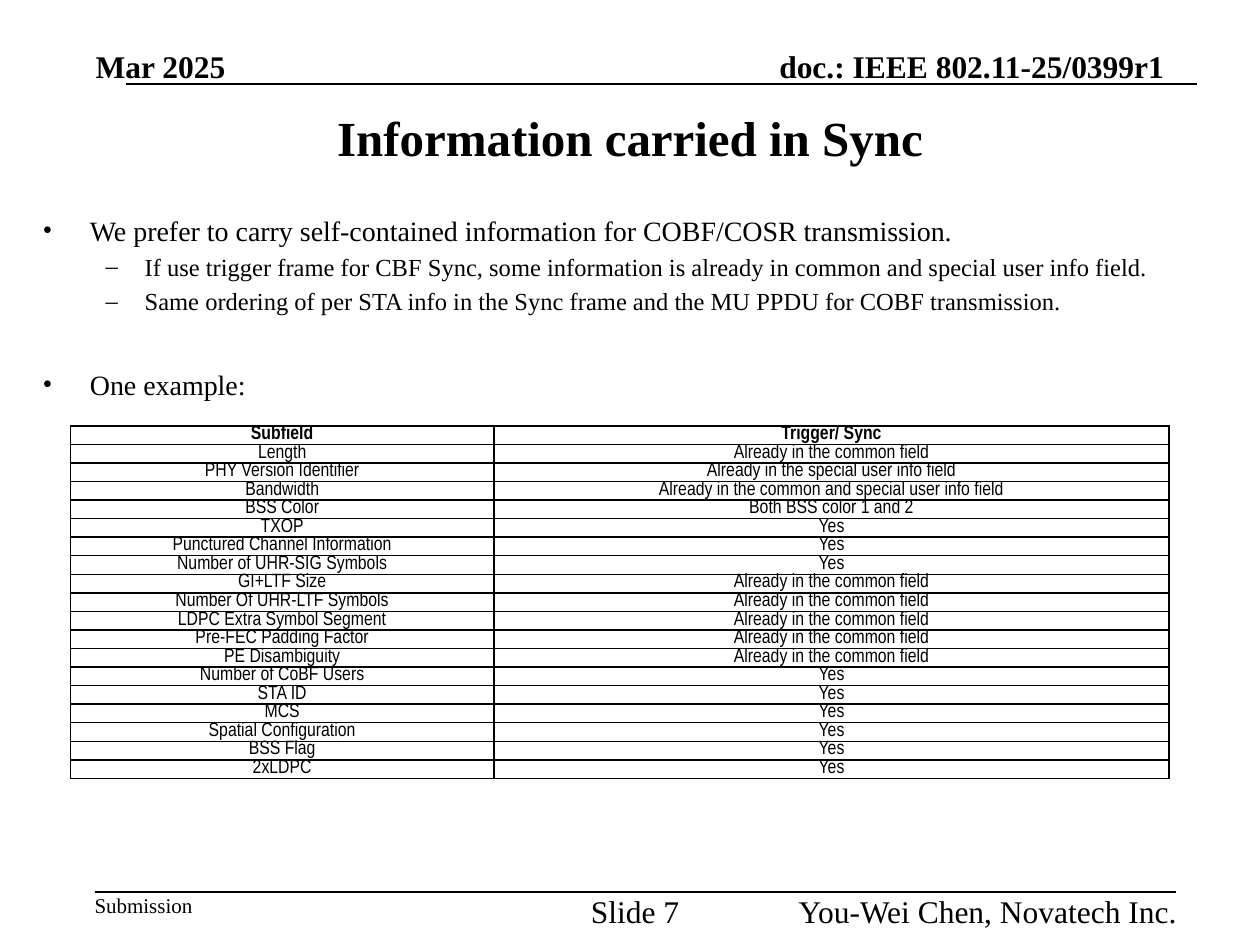
from lxml import etree
from pptx import Presentation
from pptx import util as u
from pptx.dml.color import RGBColor
from pptx.enum import shapes, text
from pptx.oxml import ns

BLACK = RGBColor(0, 0, 0)
WHITE = RGBColor(255, 255, 255)
SERIF = "Times New Roman"
NARROW = "Arial Narrow"
WIDTH, HEIGHT = u.Inches(10), u.Inches(7.5)
COLUMN, ROW = WIDTH / 100, HEIGHT / 75
LEFT, CENTER, RIGHT = text.PP_ALIGN.LEFT, text.PP_ALIGN.CENTER, text.PP_ALIGN.RIGHT
TOP, MIDDLE, BOTTOM = text.MSO_ANCHOR.TOP, text.MSO_ANCHOR.MIDDLE, text.MSO_ANCHOR.BOTTOM
BULLETS = [("•", 3.75, 3.75, 16), ("–", 8.1, 3.1, 14)]

COMMON = "Already in the common field"
FIELDS = [
    ("Subfield", "Trigger/ Sync"),
    ("Length", COMMON),
    ("PHY Version Identifier", "Already in the special user info field"),
    ("Bandwidth", "Already in the common and special user info field"),
    ("BSS Color", "Both BSS color 1 and 2"),
    ("TXOP", "Yes"),
    ("Punctured Channel Information", "Yes"),
    ("Number of UHR-SIG Symbols", "Yes"),
    ("GI+LTF Size", COMMON),
    ("Number Of UHR-LTF Symbols", COMMON),
    ("LDPC Extra Symbol Segment", COMMON),
    ("Pre-FEC Padding Factor", COMMON),
    ("PE Disambiguity", COMMON),
    ("Number of CoBF Users", "Yes"),
    ("STA ID", "Yes"),
    ("MCS", "Yes"),
    ("Spatial Configuration", "Yes"),
    ("BSS Flag", "Yes"),
    ("2xLDPC", "Yes"),
]


def across(columns):
    """Turn grid columns into a length."""
    return u.Emu(round(columns * COLUMN))


def down(rows):
    """Turn grid rows into a length."""
    return u.Emu(round(rows * ROW))


def style(paragraph, size, name=SERIF, bold=False):
    """Set the font of a whole paragraph."""
    font = paragraph.font
    font.size, font.name, font.bold = u.Pt(size), name, bold
    font.color.rgb = BLACK


def add_box(slide, left, top, width, height):
    """Add an empty text box placed on the grid."""
    return slide.shapes.add_textbox(across(left), down(top), across(width), down(height))


def add_label(slide, place, words, size, align=LEFT, anchor=TOP, bold=False):
    """Add one unwrapped line of text without insets."""
    frame = add_box(slide, *place).text_frame
    frame.margin_left = frame.margin_right = frame.margin_top = frame.margin_bottom = 0
    frame.word_wrap = False
    frame.vertical_anchor = anchor
    paragraph = frame.paragraphs[0]
    paragraph.text, paragraph.alignment = words, align
    style(paragraph, size, bold=bold)


def add_rule(slide, left, right, top):
    """Add a thin horizontal line."""
    line = slide.shapes.add_connector(
        shapes.MSO_CONNECTOR.STRAIGHT, across(left), down(top), across(right), down(top))
    line.line.color.rgb, line.line.width = BLACK, u.Pt(1)
    etree.SubElement(line._element.spPr, ns.qn("a:effectLst"))


def add_bullets(slide, place, items):
    """Add a wrapped bullet list from pairs of level and words."""
    frame = add_box(slide, *place).text_frame
    frame.word_wrap = True
    for index, (level, words) in enumerate(items):
        mark, margin, hanging, size = BULLETS[level]
        paragraph = frame.add_paragraph() if index else frame.paragraphs[0]
        paragraph.text, paragraph.level = words, level
        if index:
            paragraph.space_before = u.Pt(size * 0.2)
        properties = paragraph._p.get_or_add_pPr()
        properties.set("marL", str(across(margin)))
        properties.set("indent", str(-across(hanging)))
        etree.SubElement(properties, ns.qn("a:buFont"), typeface=SERIF)
        etree.SubElement(properties, ns.qn("a:buChar"), char=mark)
        style(paragraph, size)


def add_borders(cell):
    """Draw a thin black line on all sides of a cell."""
    properties = cell._tc.get_or_add_tcPr()
    for index, side in enumerate(("lnL", "lnR", "lnT", "lnB")):
        line = etree.Element(ns.qn(f"a:{side}"), w=str(u.Pt(1)))
        fill = etree.SubElement(line, ns.qn("a:solidFill"))
        etree.SubElement(fill, ns.qn("a:srgbClr"), val=str(BLACK))
        properties.insert(index, line)


def add_field_table(slide, left, top, widths, row_height):
    """Add the table of subfields and how each one is carried."""
    table = slide.shapes.add_table(
        len(FIELDS), len(widths), across(left), down(top),
        across(sum(widths)), down(row_height * len(FIELDS))).table
    table.first_row = table.horz_banding = False
    for column, width in zip(table.columns, widths):
        column.width = across(width)
    for index, (row, values) in enumerate(zip(table.rows, FIELDS)):
        row.height = down(row_height)
        for cell, words in zip(row.cells, values):
            cell.margin_left = cell.margin_right = cell.margin_top = cell.margin_bottom = 0
            cell.vertical_anchor = MIDDLE
            cell.fill.solid()
            cell.fill.fore_color.rgb = WHITE
            add_borders(cell)
            paragraph = cell.text_frame.paragraphs[0]
            paragraph.text, paragraph.alignment = words, CENTER
            paragraph.line_spacing = 0.8
            style(paragraph, 11, NARROW, bold=index == 0)


def main():
    """Build the slide and save it."""
    presentation = Presentation()
    presentation.slide_width, presentation.slide_height = WIDTH, HEIGHT
    slide = presentation.slides.add_slide(presentation.slide_layouts[6])
    add_label(slide, (7.6, 3.7, 10.4, 3), "Mar 2025", 18, LEFT, BOTTOM, True)
    add_label(slide, (56.5, 3.7, 35.9, 3), "doc.: IEEE 802.11-25/0399r1", 18, RIGHT, BOTTOM, True)
    add_rule(slide, 10, 95, 6.65)
    add_label(slide, (7.5, 7.5, 85, 6.7), "Information carried in Sync", 28, CENTER, MIDDLE, True)
    add_bullets(slide, (2.4, 16.45, 92.6, 12.2), [
        (0, "We prefer to carry self-contained information for COBF/COSR transmission."),
        (1, "If use trigger frame for CBF Sync, some information is already in common "
            "and special user info field."),
        (1, "Same ordering of per STA info in the Sync frame and the MU PPDU "
            "for COBF transmission."),
    ])
    add_bullets(slide, (2.4, 28.65, 50, 3.7), [(0, "One example:")])
    add_field_table(slide, 5.6, 33.8, (33.6, 53.6), 1.4)
    add_rule(slide, 7.5, 93.3, 70.8)
    add_label(slide, (7.5, 70.8, 7.8, 2), "Submission", 12)
    add_label(slide, (45.4, 70.8, 10, 2), "Slide 7", 18, CENTER)
    add_label(slide, (58.4, 70.8, 35, 2), "You-Wei Chen, Novatech Inc.", 18, RIGHT)
    presentation.save("out.pptx")


if __name__ == "__main__":
    main()
